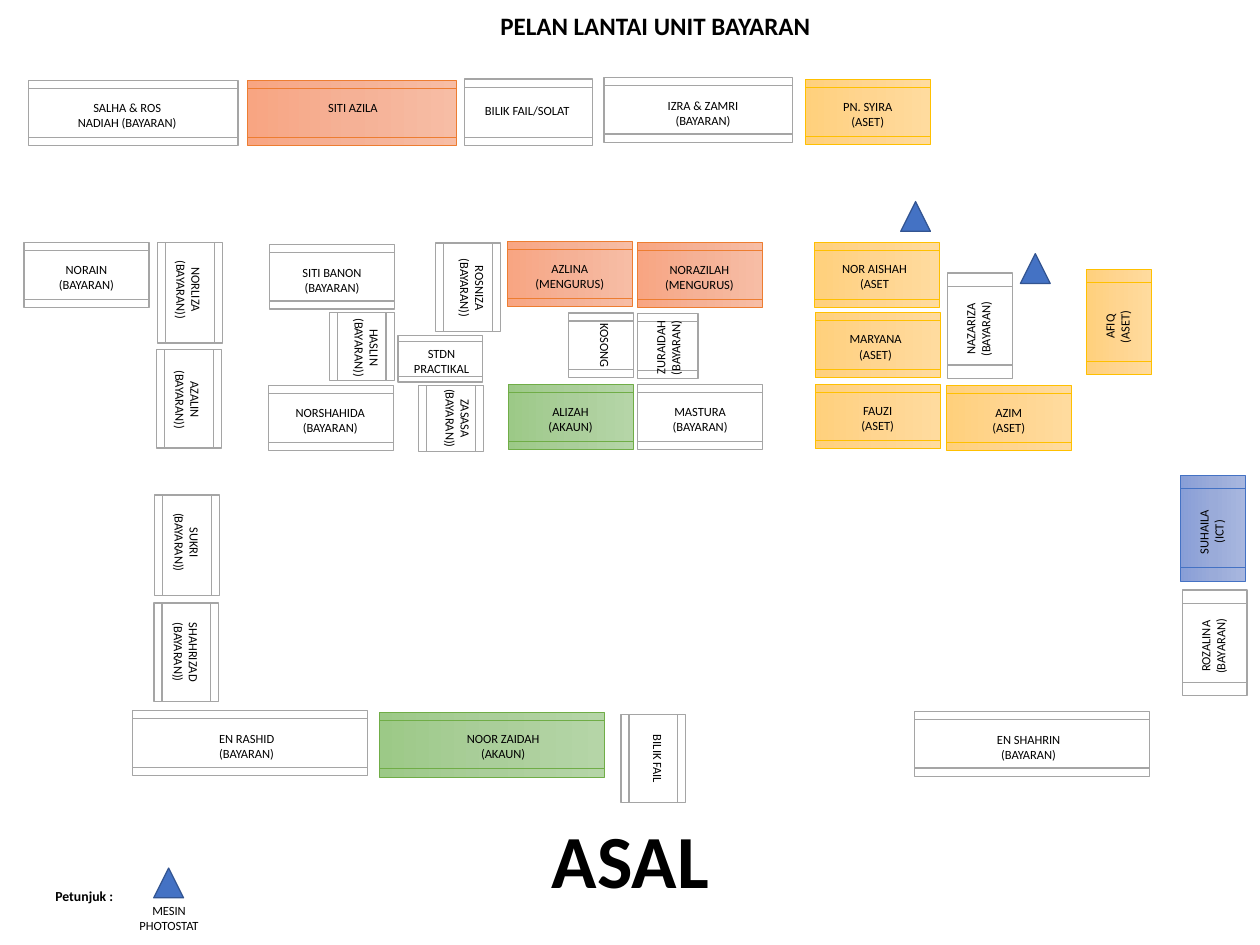
from copy import deepcopy

from pptx import Presentation
from pptx.dml.color import RGBColor
from pptx.enum.shapes import MSO_SHAPE as SHAPE
from pptx.enum.text import MSO_ANCHOR as ANCHOR, MSO_AUTO_SIZE as AUTOSIZE, PP_ALIGN as ALIGN
from pptx.oxml.ns import qn
from pptx.util import Cm, Pt

DEPTH = 1.83
UNITS = {
    "BAYARAN": (["FFFFFF"], "A5A5A5", 1),
    "MENGURUS": (["F7BDA5", "F5B196", "F8A582"], "ED7D31", 0.5),
    "AKAUN": (["B5D5A7", "AACE9A", "9CC987"], "70AD47", 0.5),
    "ASET": (["FFDB9E", "FFD590", "FFD07C"], "FFC000", 0.5),
    "ICT": (["A8B7DF", "9AABD9", "889ED7"], "4472C4", 0.5),
}
DIRECTIONS = {"across": (90, 0), "down": (180, 90), "up": (90, 270)}


def color(value):
    """Turn a hex string into a colour."""
    return RGBColor.from_string(value)


def centred(cx, cy, w, h):
    """Return the box of the given size around a centre, all in centimetres."""
    return Cm(cx - w / 2), Cm(cy - h / 2), Cm(w), Cm(h)


def write(shape, text, size=10, bold=False, align=ALIGN.CENTER, anchor=ANCHOR.MIDDLE, wrap=True):
    """Fill a shape with formatted text, one paragraph a line."""
    tf = shape.text_frame
    tf.word_wrap, tf.auto_size, tf.vertical_anchor = wrap, AUTOSIZE.NONE, anchor
    for i, line in enumerate(text.split("\n")):
        p = tf.paragraphs[0] if i == 0 else tf.add_paragraph()
        p.alignment = align
        r = p.add_run()
        r.text = line
        r.font.name, r.font.size, r.font.bold = "Calibri", Pt(size), bold
        r.font.color.rgb = color("000000")


def add_label(slide, text, cx, cy, width, turn=0, height=1.12, **fmt):
    """Add a text box around a centre."""
    sp = slide.shapes.add_textbox(*centred(cx, cy, width, height))
    sp.rotation = turn
    write(sp, text, **fmt)


def add_block(slide, kind, box, fills, line, weight, turn=0):
    """Add a preset shape with a solid or a gradient fill."""
    sp = slide.shapes.add_shape(kind, *box)
    sp.shadow.inherit = False
    sp.rotation = turn
    sp.line.color.rgb, sp.line.width = color(line), Pt(weight)
    if len(fills) == 1:
        sp.fill.solid()
        sp.fill.fore_color.rgb = color(fills[0])
        return
    sp.fill.gradient()
    sp.fill.gradient_angle = 270
    stops = sp._element.spPr.find(qn("a:gradFill")).find(qn("a:gsLst"))
    stops.insert(1, deepcopy(stops[0]))
    for i, (stop, value) in enumerate(zip(sp.fill.gradient_stops, fills)):
        stop.position = i / 2
        stop.color.rgb = color(value)


def add_desk(slide, text, cx, cy, length=3.53, dx=0, dy=0.06, unit="BAYARAN",
             way="across", depth=DEPTH, width=2.69, turn=None):
    """Add one desk and its label, shifted from the desk's centre."""
    desk_turn, label_turn = DIRECTIONS[way]
    w, h = (length, depth) if way == "up" else (depth, length)
    add_block(slide, SHAPE.FLOWCHART_PREDEFINED_PROCESS, centred(cx, cy, w, h),
              *UNITS[unit], turn=desk_turn)
    add_label(slide, text, cx + dx, cy + dy, width, label_turn if turn is None else turn)


def add_area(slide, left, top, desks, **common):
    """Add the desks of one area relative to its corner."""
    for text, x, y, options in desks:
        add_desk(slide, text, left + x, top + y, **{**common, **options})


def add_copier(slide, cx, cy):
    """Add the triangle that marks a photocopier."""
    add_block(slide, SHAPE.ISOSCELES_TRIANGLE, centred(cx, cy, 0.84, 0.84),
              ["4472C4"], "325491", 1)


def add_legend(slide, left, top):
    """Add the legend relative to its corner."""
    add_label(slide, "Petunjuk :", left + 1.64, top + 0.78, 3.28, size=11, bold=True)
    add_copier(slide, left + 4.02, top + 0.42)
    add_label(slide, "MESIN PHOTOSTAT", left + 4.03, top + 1.4, 2.82)


def add_floor(slide):
    """Add all the areas of the floor."""
    add_area(slide, 0, 2, [
        ("SALHA & ROS NADIAH (BAYARAN)", 3.76, 1.19, dict(length=5.92, dx=-0.17, width=3.53)),
        ("SITI AZILA", 9.93, 1.19, dict(length=5.92, dx=0.03, dy=-0.15, unit="MENGURUS")),
        ("BILIK FAIL/SOLAT", 14.91, 1.17,
         dict(length=3.61, dx=-0.03, dy=-0.06, depth=1.88, width=3.86)),
        ("IZRA & ZAMRI\n(BAYARAN)", 19.71, 1.1, dict(length=5.33, dx=0.13, dy=0.08)),
        ("PN. SYIRA\n(ASET)", 24.49, 1.16, dict(unit="ASET")),
    ])
    add_area(slide, 0, 6, [
        ("NORAIN\n(BAYARAN)", 2.44, 1.76, dict(way="across", length=3.53, dy=0.06)),
        ("NORLIZA\n(BAYARAN))", 5.36, 2.26, dict(dx=-0.03, dy=-0.08)),
        ("AZALIN\n(BAYARAN))", 5.33, 5.25, dict(length=2.79, dx=-0.03, dy=0.03)),
        ("SUKRI\n(BAYARAN))", 5.28, 9.39, dict(dy=-0.08)),
        ("SHAHRIZAD\n(BAYARAN))", 5.26, 12.41, dict(length=2.79, dy=0)),
    ], way="down", length=2.84)
    add_area(slide, 7, 6, [
        ("SITI BANON\n(BAYARAN)", 2.37, 1.81, dict(dy=0.09)),
        ("NORSHAHIDA\n(BAYARAN)", 2.35, 5.8, dict(dx=-0.03)),
        ("HASLIN\n(BAYARAN))", 3.21, 3.78, dict(way="down", length=1.93, dx=0.15, dy=0.03)),
        ("ROSNIZA\n(BAYARAN))", 6.21, 2.1, dict(way="down", length=2.49, dx=0.13, dy=0.03)),
        ("ZASASA\n(BAYARAN))", 5.73, 5.81, dict(way="down", length=1.88, dx=0.2, dy=0)),
        ("STDN PRACTIKAL", 5.43, 4.13, dict(length=2.39, depth=1.3, dx=0.03, dy=0.05, width=2.82)),
    ])
    add_area(slide, 14, 6, [
        ("AZLINA\n(MENGURUS)", 2.08, 1.73, dict(unit="MENGURUS")),
        ("NORAZILAH\n(MENGURUS)", 5.74, 1.76, dict(unit="MENGURUS")),
        ("KOSONG", 2.97, 3.75, dict(length=DEPTH, dx=0.11, dy=0.01, width=2.11, turn=90)),
        ("ZURAIDAH\n(BAYARAN)", 4.85, 3.77, dict(length=1.7, dy=0.04, width=2.82, turn=270)),
        ("ALIZAH\n(AKAUN)", 2.1, 5.77, dict(unit="AKAUN")),
        ("MASTURA\n(BAYARAN)", 5.76, 5.77, {}),
    ])
    add_area(slide, 23, 6, [
        ("NOR AISHAH\n(ASET", 1.74, 1.76, dict(dx=-0.06, dy=0.04)),
        ("MARYANA\n(ASET)", 1.77, 3.74, dict(dx=-0.06, dy=0.04)),
        ("FAUZI\n(ASET)", 1.77, 5.75, {}),
        ("AZIM\n(ASET)", 5.47, 5.8, {}),
    ], unit="ASET")
    add_area(slide, 27, 9, [
        ("NAZARIZA\n(BAYARAN)", 0.65, 0.19, {}),
        ("AFIQ\n(ASET)", 4.58, 0.09, dict(unit="ASET", dy=0.13)),
        ("SUHAILA\n(ICT)", 7.23, 5.91, dict(unit="ICT")),
        ("ROZALINA\n(BAYARAN)", 7.28, 9.14, {}),
    ], way="up", length=2.97, dx=-0.05, dy=0.1, width=2.82)
    add_area(slide, 0, 20, [
        ("EN RASHID\n(BAYARAN)", 7.06, 0.97, {}),
        ("NOOR ZAIDAH\n(AKAUN)", 13.87, 1.01, dict(length=6.35, dx=0.33, dy=0.05, unit="AKAUN")),
        ("BILIK FAIL", 18.44, 1.41, dict(way="down", length=2.49, dx=0.13, dy=0.01)),
        ("EN SHAHRIN\n(BAYARAN)", 29.13, 0.99, {}),
    ], length=6.63, dx=-0.1, dy=0.09)
    for cx, cy in [(25.84, 6.11), (29.22, 7.58)]:
        add_copier(slide, cx, cy)


def add_title(slide, left, top, width, height):
    """Move and format the title placeholder."""
    sp = slide.shapes.title
    sp.left, sp.top, sp.width, sp.height = Cm(left), Cm(top), Cm(width), Cm(height)
    write(sp, "PELAN LANTAI UNIT BAYARAN", size=20, bold=True, anchor=ANCHOR.TOP)


def main():
    """Build the floor plan."""
    prs = Presentation()
    prs.slide_width, prs.slide_height = Cm(35.56), Cm(26.67)
    slide = prs.slides.add_slide(prs.slide_layouts[5])
    add_title(slide, 12.55, 0.18, 11.89, 1.12)
    add_floor(slide)
    add_legend(slide, 0.74, 24.5)
    add_label(slide, "ASAL", 17.82, 24.24, 5, height=2.82, size=60, bold=True,
              align=ALIGN.LEFT, wrap=False)
    prs.save("out.pptx")


if __name__ == "__main__":
    main()
